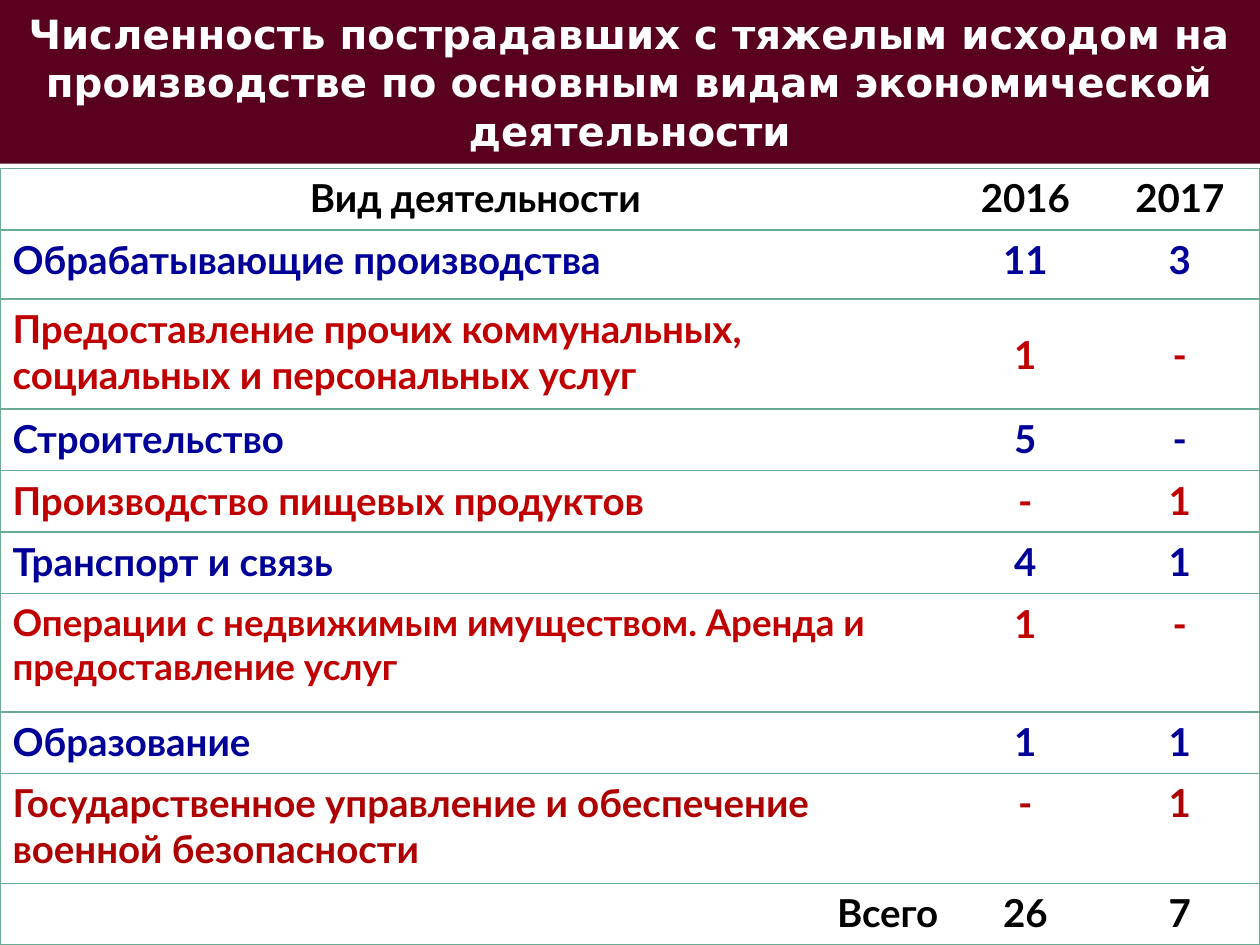
from dataclasses import dataclass
from lxml.etree import SubElement
from pptx import Presentation
from pptx.dml.color import RGBColor
from pptx.enum.text import MSO_ANCHOR, MSO_AUTO_SIZE, PP_ALIGN
from pptx.oxml.ns import qn
from pptx.util import Cm, Pt


@dataclass(frozen=True)
class Theme:
    wine: str = "58001D"
    white: str = "FFFFFF"
    black: str = "000000"
    blue: str = "000099"
    red: str = "C00000"
    dark: str = "AE0202"
    green: str = "6AAC91"
    head: str = "DejaVu Sans"
    body: str = "Lato"
    title: float = 23
    text: float = 22
    small: float = 21
    line: float = 1


@dataclass(frozen=True)
class Box:
    left: float
    top: float
    width: float
    height: float

    def place(self):
        return [Cm(v) for v in (self.left, self.top, self.width, self.height)]


@dataclass(frozen=True)
class Row:
    texts: tuple
    color: str
    height: float = 1.24
    size: float = Theme.text
    align: PP_ALIGN = PP_ALIGN.LEFT
    anchor: MSO_ANCHOR = MSO_ANCHOR.TOP


THEME = Theme()
PAGE = Box(0, 0, 25.4, 19.05)
YEARS = (3, 3.23)
TITLE = ("Численность пострадавших с тяжелым исходом на производстве "
         "по основным видам экономической деятельности")
ROWS = [
    Row(("Вид деятельности", "2016", "2017"), THEME.black, align=PP_ALIGN.CENTER),
    Row(("Обрабатывающие производства", "11", "3"), THEME.blue, 1.39),
    Row(("Предоставление прочих коммунальных, социальных и персональных услуг",
         "1", "-"), THEME.red, 2.22, anchor=MSO_ANCHOR.MIDDLE),
    Row(("Строительство", "5", "-"), THEME.blue),
    Row(("Производство пищевых продуктов", "-", "1"), THEME.red),
    Row(("Транспорт и связь", "4", "1"), THEME.blue),
    Row(("Операции с недвижимым имуществом. Аренда и предоставление услуг",
         "1", "-"), THEME.red, 2.38, THEME.small),
    Row(("Образование", "1", "1"), THEME.blue),
    Row(("Государственное управление и обеспечение военной безопасности",
         "-", "1"), THEME.dark, 2.22),
    Row(("Всего", "26", "7"), THEME.black, align=PP_ALIGN.RIGHT),
]


def paint(fill, color):
    fill.solid()
    fill.fore_color.rgb = RGBColor.from_string(color)


def write(frame, text, face, size, color, align):
    para = frame.paragraphs[0]
    para.alignment = align
    run = para.add_run()
    run.text = text
    font = run.font
    font.name, font.size, font.bold = face, Pt(size), True
    font.color.rgb = RGBColor.from_string(color)


def rule(cell, drawn):
    props = cell._tc.get_or_add_tcPr()
    for side in "LRTB":
        line = SubElement(props, qn(f"a:ln{side}"), w=str(Pt(THEME.line)))
        if side in drawn:
            fill = SubElement(line, qn("a:solidFill"))
            SubElement(fill, qn("a:srgbClr"), val=THEME.green)
        else:
            SubElement(line, qn("a:noFill"))


def add_title(slide, box):
    shape = slide.shapes.title
    shape.left, shape.top, shape.width, shape.height = box.place()
    paint(shape.fill, THEME.wine)
    frame = shape.text_frame
    frame.word_wrap = True
    frame.auto_size = MSO_AUTO_SIZE.NONE
    frame.vertical_anchor = MSO_ANCHOR.MIDDLE
    write(frame, TITLE, THEME.head, THEME.title, THEME.white, PP_ALIGN.CENTER)


def add_grid(slide, box):
    widths = (box.width - sum(YEARS), *YEARS)
    grid = slide.shapes.add_table(len(ROWS), len(widths), *box.place()).table
    grid.first_row = grid.horz_banding = False
    for col, width in zip(grid.columns, widths):
        col.width = Cm(width)
    for r, row in enumerate(ROWS):
        grid.rows[r].height = Cm(row.height)
        for c, (text, sides) in enumerate(zip(row.texts, ("LTB", "TB", "RTB"))):
            cell = grid.cell(r, c)
            rule(cell, sides)
            paint(cell.fill, THEME.white)
            cell.vertical_anchor = row.anchor if c else MSO_ANCHOR.TOP
            write(cell.text_frame, text, THEME.body,
                  THEME.text if c else row.size, row.color,
                  PP_ALIGN.CENTER if c else row.align)


def main():
    deck = Presentation()
    deck.slide_width, deck.slide_height = Cm(PAGE.width), Cm(PAGE.height)
    slide = deck.slides.add_slide(deck.slide_layouts[5])
    add_title(slide, Box(0, 0, PAGE.width, 3.3))
    high = sum(row.height for row in ROWS)
    add_grid(slide, Box(0, PAGE.height - high, PAGE.width, high))
    deck.save("out.pptx")


if __name__ == "__main__":
    main()
